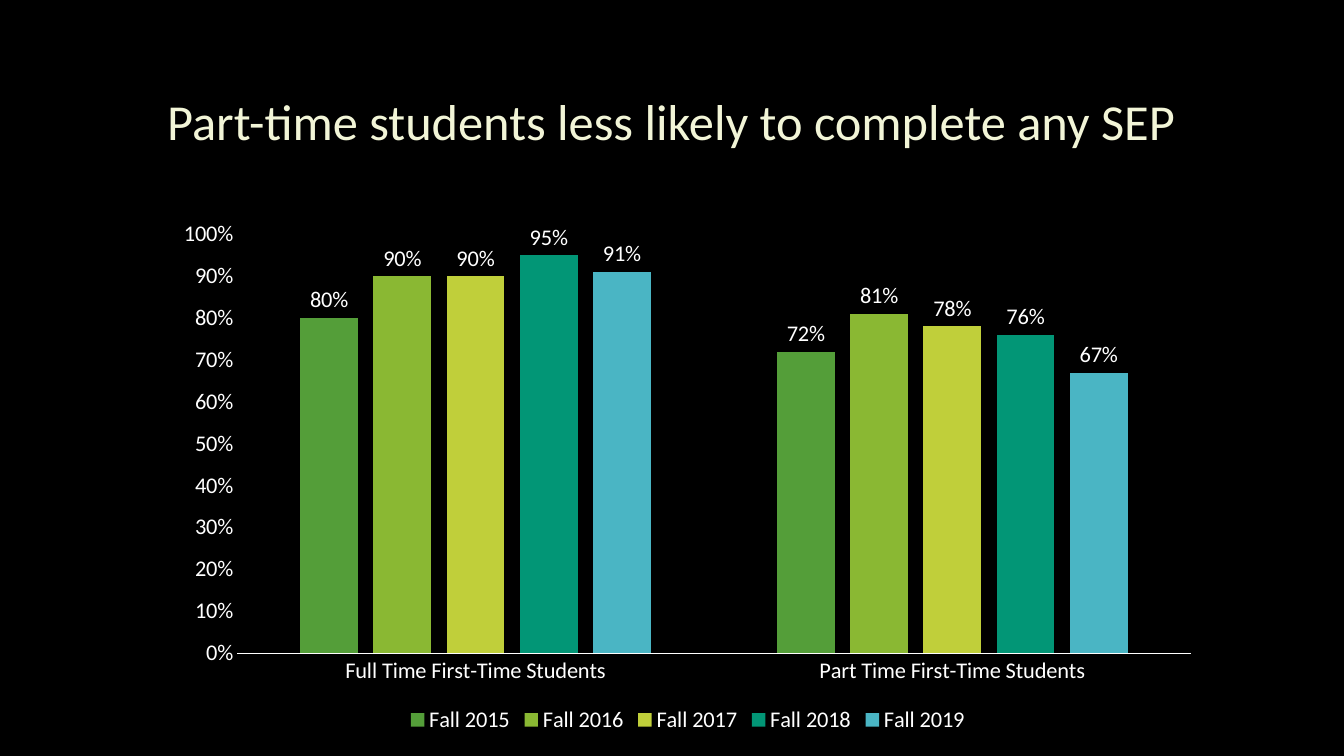
from lxml import etree
from pptx import Presentation
from pptx.chart.data import CategoryChartData
from pptx.dml.color import RGBColor
from pptx.enum.chart import (XL_CHART_TYPE, XL_LABEL_POSITION,
                             XL_LEGEND_POSITION, XL_TICK_MARK)
from pptx.enum.text import MSO_ANCHOR, PP_ALIGN
from pptx.oxml.ns import qn
from pptx.util import Pt

# Content
TITLE = "Part-time students less likely to complete any SEP"
GROUPS = ["Full Time First-Time Students", "Part Time First-Time Students"]
TERMS = [
    ("Fall 2015", (0.80, 0.72), "green"),
    ("Fall 2016", (0.90, 0.81), "lime"),
    ("Fall 2017", (0.90, 0.78), "yellow"),
    ("Fall 2018", (0.95, 0.76), "teal"),
    ("Fall 2019", (0.91, 0.67), "blue"),
]

# Style
COLORS = {
    "back": "000000", "text": "FFFFFF", "title": "F2F5D7",
    "green": "549E39", "lime": "8AB833", "yellow": "C0CF3A",
    "teal": "029676", "blue": "4AB5C4",
}
FONT = "Calibri"
PERCENT = "0%"

# Places in px, 96 to the inch
SCALE = 9525
SIZE = (1280, 720)
TITLE_BOX = (96, 64, 1087, 102)
CHART_BOX = (156, 198, 998, 505)
PLOT = {"x": 0.07, "y": 0.05, "w": 0.91, "h": 0.79}  # shares of the chart


def emu(box):
    return [n * SCALE for n in box]


def rgb(name):
    return RGBColor.from_string(COLORS[name])


def style(font, size=16, color="text"):
    font.name = FONT
    font.size = Pt(size)
    font.bold = False
    font.color.rgb = rgb(color)


def add_text(slide, text, box, size, color, align=PP_ALIGN.CENTER):
    frame = slide.shapes.add_textbox(*emu(box)).text_frame
    frame.word_wrap = True
    frame.vertical_anchor = MSO_ANCHOR.MIDDLE
    para = frame.paragraphs[0]
    para.alignment = align
    run = para.add_run()
    run.text = text
    style(run.font, size, color)


def set_plot(chart):
    """Fix the inner plot area as shares of the chart's size."""
    area = chart.plots[0]._element.getparent()
    for old in area.findall(qn("c:layout")):
        area.remove(old)
    layout = etree.Element(qn("c:layout"))
    area.insert(0, layout)
    manual = etree.SubElement(layout, qn("c:manualLayout"))
    rules = {"layoutTarget": "inner", "xMode": "edge", "yMode": "edge", **PLOT}
    for tag, val in rules.items():
        etree.SubElement(manual, qn("c:" + tag)).set("val", str(val))


def add_bars(slide):
    data = CategoryChartData(number_format=PERCENT)
    data.categories = GROUPS
    for name, vals, _ in TERMS:
        data.add_series(name, vals)
    chart = slide.shapes.add_chart(
        XL_CHART_TYPE.COLUMN_CLUSTERED, *emu(CHART_BOX), data).chart
    style(chart.font)
    chart.has_title = False
    set_plot(chart)

    # Bars and their labels
    plot = chart.plots[0]
    plot.gap_width = 219
    plot.overlap = -27
    plot.vary_by_categories = False
    for bars, (_, _, color) in zip(plot.series, TERMS):
        bars.format.fill.solid()
        bars.format.fill.fore_color.rgb = rgb(color)
        labels = bars.data_labels
        labels.show_value = True
        labels.position = XL_LABEL_POSITION.OUTSIDE_END
        labels.number_format = PERCENT
        labels.number_format_is_linked = False
        style(labels.font)

    # Axes
    for axis in (chart.category_axis, chart.value_axis):
        axis.major_tick_mark = axis.minor_tick_mark = XL_TICK_MARK.NONE
        axis.has_major_gridlines = False
        style(axis.tick_labels.font)
    line = chart.category_axis.format.line
    line.color.rgb = rgb("text")
    line.width = Pt(0.75)
    scale = chart.value_axis
    scale.format.line.fill.background()
    scale.minimum_scale, scale.maximum_scale, scale.major_unit = 0, 1, 0.1
    scale.tick_labels.number_format = PERCENT
    scale.tick_labels.number_format_is_linked = False

    # Legend
    chart.has_legend = True
    chart.legend.position = XL_LEGEND_POSITION.BOTTOM
    chart.legend.include_in_layout = False
    style(chart.legend.font)


def main():
    deck = Presentation()
    deck.slide_width, deck.slide_height = emu(SIZE)
    slide = deck.slides.add_slide(deck.slide_layouts[6])
    fill = slide.background.fill
    fill.solid()
    fill.fore_color.rgb = rgb("back")
    add_text(slide, TITLE, TITLE_BOX, size=36, color="title")
    add_bars(slide)
    deck.save("out.pptx")


if __name__ == "__main__":
    main()
